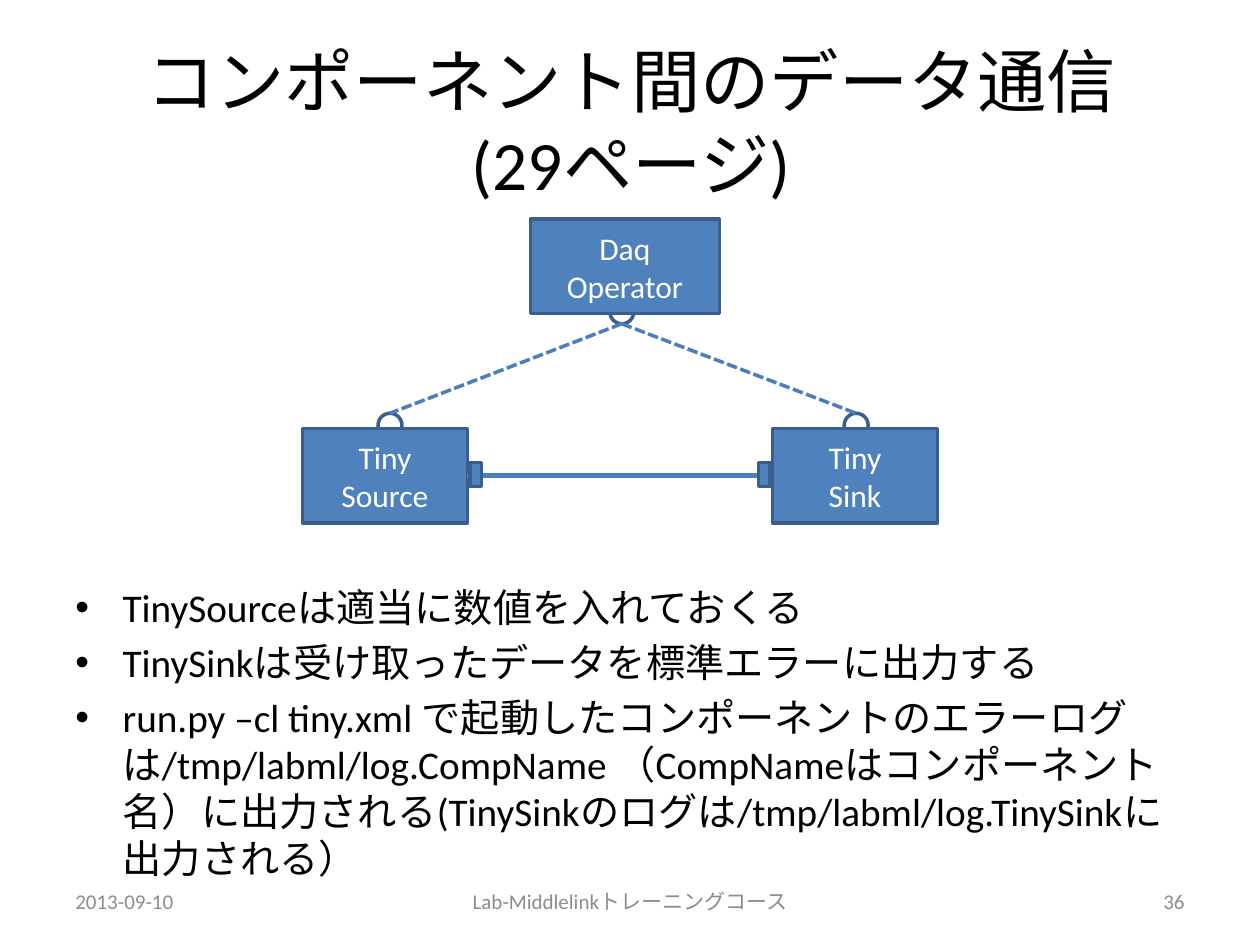
from dataclasses import dataclass

from lxml.etree import SubElement
from pptx import Presentation
from pptx.dml.color import RGBColor as Color
from pptx.enum.dml import MSO_LINE as Dash
from pptx.enum.shapes import MSO_CONNECTOR as Connector, MSO_SHAPE as Shape
from pptx.enum.text import MSO_ANCHOR as Anchor, PP_ALIGN as Align
from pptx.oxml.ns import qn
from pptx.util import Inches, Pt

COLUMNS, ROWS = 100, 75
SLIDE_WIDTH, SLIDE_HEIGHT = Inches(10), Inches(7.5)
RIGHT_SIDE, LEFT_SIDE = 3, 1


@dataclass(frozen=True)
class Theme:
    font: str = "Calibri"
    text: str = "000000"
    muted: str = "8C8C8C"
    paper: str = "FFFFFF"
    fill: str = "4F81BD"
    outline: str = "3A5F8C"
    link: str = "4B7EBC"
    title_size: float = 39.6
    body_size: float = 22.4
    label_size: float = 18
    footer_size: float = 12
    outline_width: float = 2
    data_width: float = 3


THEME = Theme()


def col(count):
    return int(SLIDE_WIDTH * count / COLUMNS)


def row(count):
    return int(SLIDE_HEIGHT * count / ROWS)


def place(left, top, width, height):
    return col(left), row(top), col(width), row(height)


def write(frame, lines, size, color, align):
    frame.word_wrap = True
    for index, line in enumerate(lines):
        para = frame.paragraphs[0] if index == 0 else frame.add_paragraph()
        para.alignment = align
        span = para.add_run()
        span.text = line
        span.font.name = THEME.font
        span.font.size = Pt(size)
        span.font.color.rgb = Color.from_string(color)


def add_text(page, area, lines, size, color, align=Align.LEFT, anchor=Anchor.MIDDLE):
    frame = page.shapes.add_textbox(*place(*area)).text_frame
    frame.vertical_anchor = anchor
    write(frame, lines, size, color, align)
    return frame


def add_bullets(page, area, lines):
    frame = add_text(page, area, lines, THEME.body_size, THEME.text, anchor=Anchor.TOP)
    for para in frame.paragraphs:
        para.space_before = Pt(THEME.body_size * 0.2)
        props = para._p.get_or_add_pPr()
        props.set("marL", str(col(3.75)))
        props.set("indent", str(-col(3.75)))
        SubElement(props, qn("a:buFont"), typeface="Arial")
        SubElement(props, qn("a:buChar"), char="•")


def add_figure(page, kind, area, fill):
    figure = page.shapes.add_shape(kind, *place(*area))
    figure.shadow.inherit = False
    figure.fill.solid()
    figure.fill.fore_color.rgb = Color.from_string(fill)
    figure.line.color.rgb = Color.from_string(THEME.outline)
    figure.line.width = Pt(THEME.outline_width)
    return figure


def add_component(page, area, lines):
    box = add_figure(page, Shape.RECTANGLE, area, THEME.fill)
    box.text_frame.vertical_anchor = Anchor.MIDDLE
    write(box.text_frame, lines, THEME.label_size, THEME.paper, Align.CENTER)
    return box


def add_link(page, start, end, width, dash=None):
    link = page.shapes.add_connector(
        Connector.STRAIGHT, col(start[0]), row(start[1]), col(end[0]), row(end[1])
    )
    link.line.color.rgb = Color.from_string(THEME.link)
    link.line.width = Pt(width)
    if dash is not None:
        link.line.dash_style = dash
    SubElement(link._element.spPr, qn("a:effectLst"))
    return link


def add_diagram(page):
    knob = 1.9
    operator_knob = (48.4, 23.8)
    component_knobs = [(30, 32.8), (67, 32.8)]
    for left, top in [operator_knob, *component_knobs]:
        add_figure(page, Shape.OVAL, (left, top, knob, knob), THEME.paper)

    source = add_component(page, (24, 34, 13.1, 7.5), ["Tiny", "Source"])
    sink = add_component(page, (61.3, 34, 13.1, 7.5), ["Tiny", "Sink"])
    add_component(page, (42.1, 17.4, 15, 7.5), ["Daq Operator"])

    data = add_link(page, (37.1, 37.75), (61.3, 37.75), THEME.data_width)
    data.begin_connect(source, RIGHT_SIDE)
    data.end_connect(sink, LEFT_SIDE)

    hub = (operator_knob[0] + knob / 2, operator_knob[1] + knob)
    for left, top in component_knobs:
        add_link(page, hub, (left + knob / 2, top), THEME.outline_width, Dash.SQUARE_DOT)

    for left in (37.3, 60.2):
        add_figure(page, Shape.RECTANGLE, (left, 36.7, 0.9, knob), THEME.fill)


def add_footer(page):
    for left, width, text, align in [
        (5, 23.3, "2013-09-10", Align.LEFT),
        (31.5, 37, "Lab-Middlelinkトレーニングコース", Align.CENTER),
        (71.7, 23.3, "36", Align.RIGHT),
    ]:
        area = (left, 69.5, width, 4)
        add_text(page, area, [text], THEME.footer_size, THEME.muted, align)


def main():
    deck = Presentation()
    deck.slide_width, deck.slide_height = SLIDE_WIDTH, SLIDE_HEIGHT
    page = deck.slides.add_slide(deck.slide_layouts[6])
    add_text(
        page,
        (5.1, 3.1, 90, 13),
        ["コンポーネント間のデータ通信", "(29ページ)"],
        THEME.title_size,
        THEME.text,
        Align.CENTER,
    )
    add_bullets(
        page,
        (5, 45.8, 90, 19.2),
        [
            "TinySourceは適当に数値を入れておくる",
            "TinySinkは受け取ったデータを標準エラーに出力する",
            "run.py –cl tiny.xml で起動したコンポーネントのエラーログは"
            "/tmp/labml/log.CompName （CompNameはコンポーネント名）に出力される"
            "(TinySinkのログは/tmp/labml/log.TinySinkに出力される）",
        ],
    )
    add_footer(page)
    add_diagram(page)
    deck.save("out.pptx")


if __name__ == "__main__":
    main()
